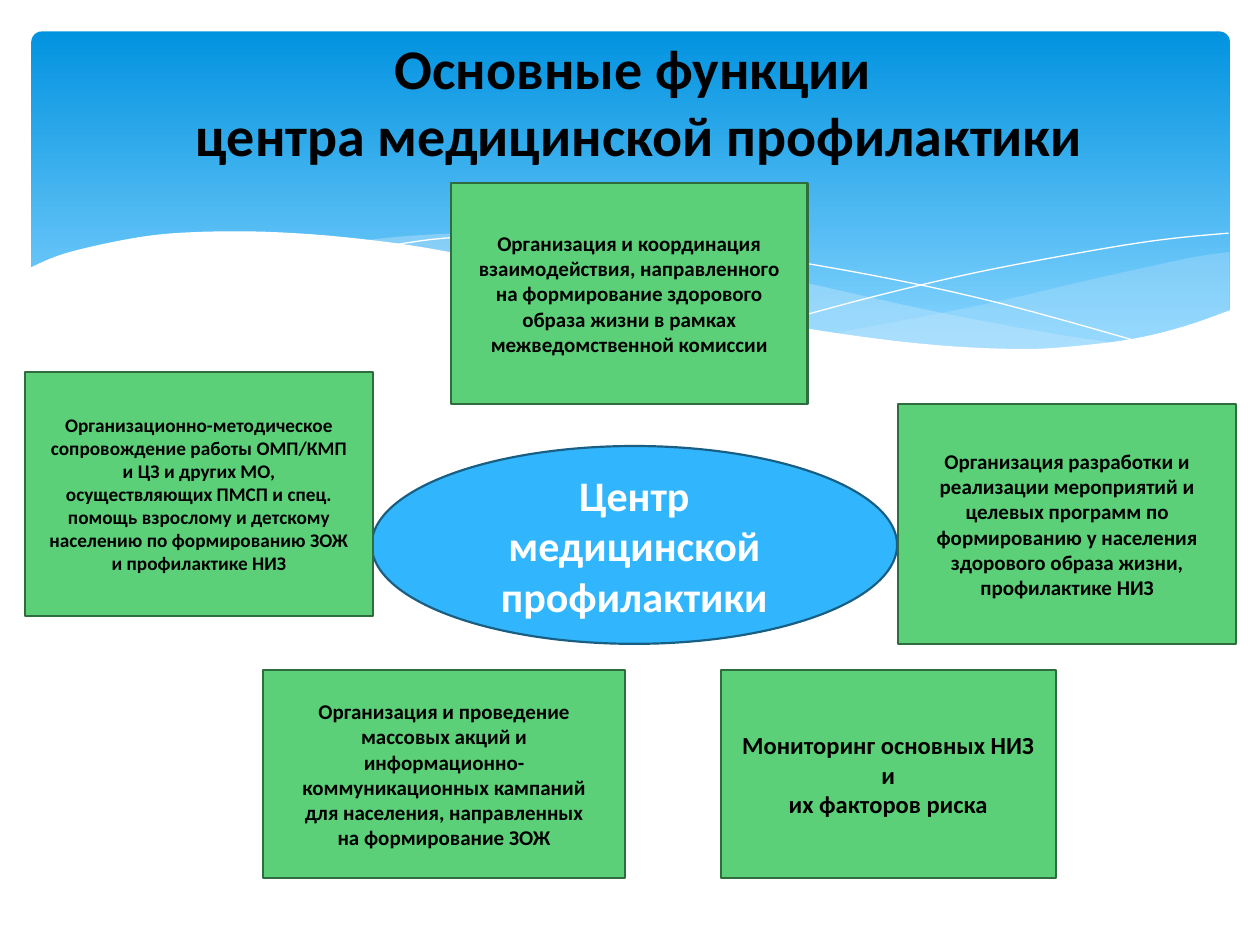
from dataclasses import dataclass

from lxml import etree
from pptx import Presentation
from pptx.dml.color import RGBColor
from pptx.enum.shapes import MSO_SHAPE
from pptx.enum.text import MSO_ANCHOR, PP_ALIGN
from pptx.oxml.ns import qn
from pptx.util import Emu, Inches, Pt

RECT, OVAL, ROUNDED = MSO_SHAPE.RECTANGLE, MSO_SHAPE.OVAL, MSO_SHAPE.ROUNDED_RECTANGLE
MIDDLE, CENTER = MSO_ANCHOR.MIDDLE, PP_ALIGN.CENTER

COLORS = {
    "sky_top": "0293E0", "sky_bottom": "83D3FE", "ribbon": "C6E7FC",
    "white": "FFFFFF", "black": "000000",
    "green": "5BD078", "green_line": "2F6D3F",
    "blue": "31B6FD", "blue_line": "195F84",
}
FONT = "Calibri"
SLIDE_W, SLIDE_H = Inches(10), Inches(7.5)
COL, ROW = SLIDE_W / 100, SLIDE_H / 75  # grid of 100 columns by 75 rows

Point = tuple[float, float]


@dataclass
class Cell:
    """Place on the grid, in columns and rows."""
    x: float
    y: float
    w: float
    h: float

    def emu(self) -> list[Emu]:
        return [Emu(round(n * unit)) for n, unit in
                zip((self.x, self.y, self.w, self.h), (COL, ROW, COL, ROW))]


@dataclass
class Node:
    cell: Cell
    size: int
    lines: list[str]
    kind: int = RECT
    fill: str = "green"
    line: str = "green_line"
    text: str = "black"


@dataclass
class Wave:
    """Smooth edges joined into one outline; without a fill it is an open line."""
    edges: list[list[Point]]
    fill: str | None = None
    alpha: int = 100


FAR_RIBBON = Wave([
    [(97.6, 20), (94.8, 20.4), (90.6, 21.3), (86.1, 22.3), (77.9, 24.2), (66.1, 26.5)],
    [(66.1, 26.5), (71.9, 27.2), (76.9, 27.7), (81.4, 27.8), (85.4, 27.7),
     (89.7, 27), (93.5, 26.2), (97.6, 24.7)],
], "ribbon", 29)
NEAR_RIBBON = Wave([
    [(89.3, 27.3), (83.7, 26.5), (74.1, 24.7), (62.9, 22.2), (56.9, 20.8),
     (51.4, 19.8), (44.2, 18.9), (38, 18.5), (32.8, 18.7), (28.6, 19.1)],
    [(28.6, 19.1), (34.2, 19.9), (40.4, 21.1), (49.1, 23.2), (56.6, 24.8),
     (65, 26.4), (73.6, 27.5), (81.8, 27.8), (85.7, 27.7), (89.3, 27.3)],
], "ribbon", 40)
FALLING_LINE = Wave([[(30.9, 19.5), (35.3, 18.9), (41.6, 18.7), (48.9, 19),
                      (58.2, 20), (69.5, 21.9), (79.5, 24.1), (90.7, 27.2)]])
RISING_LINE = Wave([[(61.3, 25.7), (69.5, 23.5), (77.6, 21.6), (86.6, 19.9),
                     (92.4, 19), (97.5, 18.5)]])
FOREGROUND = Wave([
    [(97.7, 24.6), (94, 25.9), (89.9, 26.9), (85, 27.5), (80.9, 27.7), (74.4, 27.4),
     (66.8, 26.5), (57.9, 25), (50.3, 23.3), (41.8, 21.3), (34, 19.7), (27.1, 18.8),
     (21.1, 18.4), (16.1, 18.4), (11.9, 18.7), (7.6, 19.5), (4.6, 20.3), (2.3, 21.3)],
    [(2.3, 32.9), (97.7, 32.9)],
], "white")
WAVES = [FAR_RIBBON, NEAR_RIBBON, FALLING_LINE, RISING_LINE, FOREGROUND]

TITLE_LINES = ["Основные функции ", "центра медицинской профилактики"]

NODES = [
    Node(Cell(29.5, 35.4, 41.7, 15.7), 24, ["Центр медицинской профилактики"],
         OVAL, "blue", "blue_line", "white"),
    Node(Cell(35.8, 14.5, 28.3, 17.6), 12, [
        "Организация и координация", "взаимодействия, направленного",
        "на формирование здорового", "образа жизни в рамках",
        "межведомственной комиссии"]),
    Node(Cell(2, 29.5, 27.6, 19.4), 11, [
        "Организационно-методическое", "сопровождение работы ОМП/КМП",
        "и ЦЗ и других МО,", "осуществляющих ПМСП и спец.",
        "помощь взрослому и детскому", "населению по формированию ЗОЖ",
        "и профилактике НИЗ"]),
    Node(Cell(20.9, 53.2, 28.7, 16.5), 12, [
        "Организация и проведение", "массовых акций и", "информационно-",
        "коммуникационных кампаний", "для населения, направленных",
        "на формирование ЗОЖ"]),
    Node(Cell(71.3, 32.1, 26.8, 19), 12, [
        "Организация разработки и", "реализации мероприятий и",
        "целевых программ по", "формированию у населения",
        "здорового образа жизни,", "профилактике НИЗ"]),
    Node(Cell(57.2, 53.2, 26.6, 16.5), 14,
         ["Мониторинг основных НИЗ и", "их факторов риска"]),
]


def rgb(name: str) -> RGBColor:
    return RGBColor.from_string(COLORS[name])


def smooth(knots: list[Point], steps: int = 5) -> list[Point]:
    """Return points of a Catmull-Rom curve through the knots."""
    if len(knots) < 3:
        return knots
    padded = [knots[0], *knots, knots[-1]]
    points = [knots[0]]
    for a, b, c, d in zip(padded, padded[1:], padded[2:], padded[3:]):
        for i in range(1, steps + 1):
            t = i / steps
            x, y = (
                (2 * q + (r - p) * t + (2 * p - 5 * q + 4 * r - u) * t ** 2
                 + (3 * q - p - 3 * r + u) * t ** 3) / 2
                for p, q, r, u in zip(a, b, c, d))
            points.append((x, y))
    return points


def add_sky(s) -> None:
    sky = s.shapes.add_shape(ROUNDED, *Cell(2.5, 2.5, 95.1, 27).emu())
    sky.shadow.inherit = False
    sky.adjustments[0] = 0.03
    sky.line.fill.background()
    sky.fill.gradient()
    sky.fill.gradient_angle = 270
    for stop, position, name in zip(sky.fill.gradient_stops, (0, 0.9),
                                    ("sky_top", "sky_bottom")):
        stop.position = position
        stop.color.rgb = rgb(name)


def add_wave(s, wave: Wave) -> None:
    start, *rest = [(x * COL, y * ROW) for edge in wave.edges for x, y in smooth(edge)]
    builder = s.shapes.build_freeform(*start)
    builder.add_line_segments(rest, close=wave.fill is not None)
    sp = builder.convert_to_shape()
    sp.shadow.inherit = False
    if wave.fill is None:
        sp.fill.background()
        sp.line.color.rgb = rgb("white")
        sp.line.width = Pt(0)
        return
    sp.line.fill.background()
    sp.fill.solid()
    sp.fill.fore_color.rgb = rgb(wave.fill)
    if wave.alpha < 100:
        color = sp.fill._xPr.find(qn("a:solidFill"))[0]
        etree.SubElement(color, qn("a:alpha"), val=str(wave.alpha * 1000))


def add_run(p, text: str, size: int, color: str) -> None:
    r = p.add_run()
    r.text = text
    r.font.name, r.font.size, r.font.bold = FONT, Pt(size), True
    r.font.color.rgb = rgb(color)


def add_title(s) -> None:
    tf = s.shapes.add_textbox(*Cell(5, 3.7, 91.5, 8.6).emu()).text_frame
    tf.word_wrap, tf.vertical_anchor = True, MIDDLE
    p = tf.paragraphs[0]
    p.alignment = CENTER
    for i, line in enumerate(TITLE_LINES):
        if i:
            p.add_line_break()
        add_run(p, line, 32, "black")


def add_node(s, node: Node) -> None:
    sp = s.shapes.add_shape(node.kind, *node.cell.emu())
    sp.shadow.inherit = False
    sp.fill.solid()
    sp.fill.fore_color.rgb = rgb(node.fill)
    sp.line.color.rgb = rgb(node.line)
    sp.line.width = Pt(1.25)
    tf = sp.text_frame
    tf.word_wrap, tf.vertical_anchor = True, MIDDLE
    for i, line in enumerate(node.lines):
        p = tf.add_paragraph() if i else tf.paragraphs[0]
        p.alignment = CENTER
        add_run(p, line, node.size, node.text)


def main() -> None:
    prs = Presentation()
    prs.slide_width, prs.slide_height = SLIDE_W, SLIDE_H
    s = prs.slides.add_slide(prs.slide_layouts[6])
    add_sky(s)
    for wave in WAVES:
        add_wave(s, wave)
    add_title(s)
    for node in NODES:
        add_node(s, node)
    prs.save("out.pptx")


if __name__ == "__main__":
    main()
